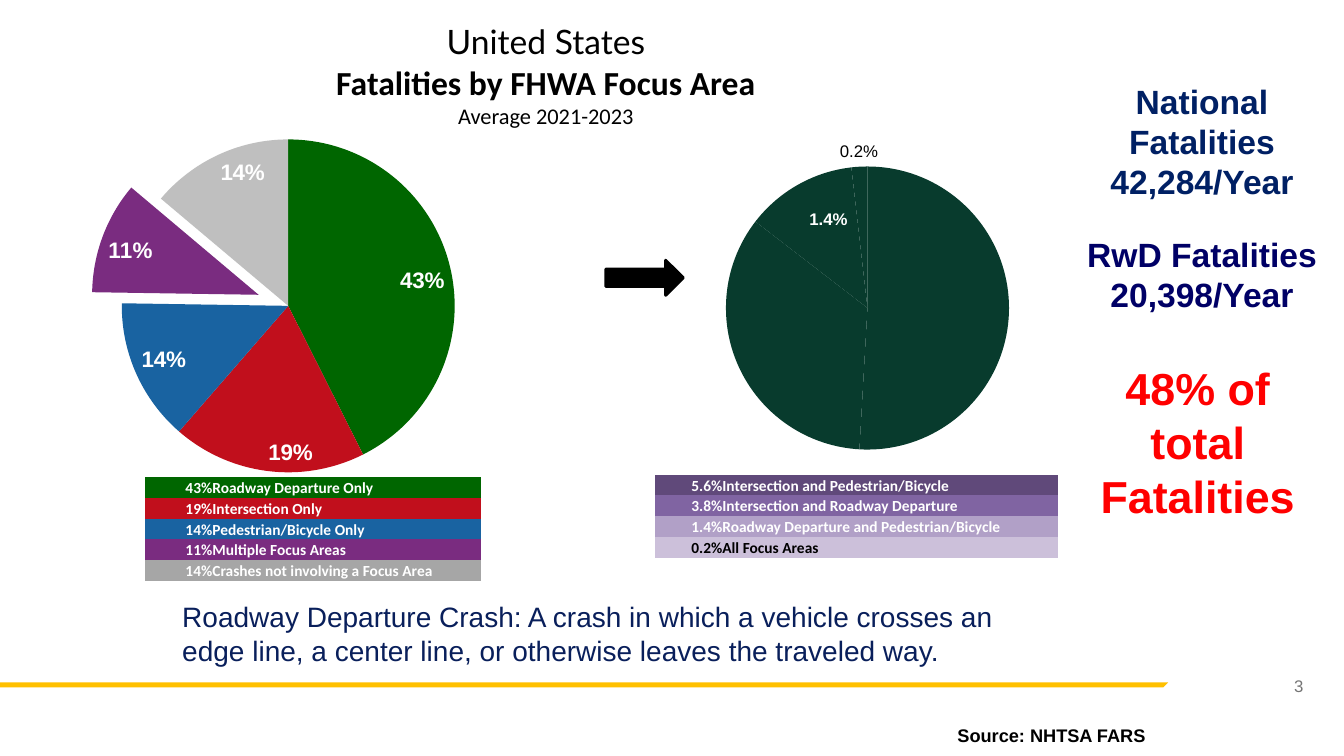
import dataclasses

import lxml.etree
import pptx
import pptx.chart.data
import pptx.dml.color
import pptx.enum.chart
import pptx.enum.shapes
import pptx.enum.text
import pptx.oxml.ns
import pptx.util

Pt = pptx.util.Pt
qn = pptx.oxml.ns.qn
ALIGN = pptx.enum.text.PP_ALIGN
ANCHOR = pptx.enum.text.MSO_ANCHOR
LABEL = pptx.enum.chart.XL_LABEL_POSITION
SHAPE = pptx.enum.shapes.MSO_SHAPE
NO_GRID_STYLE = "{2D5ABB26-0587-4C30-8999-92F81FD0307C}"


@dataclasses.dataclass(frozen=True)
class Theme:
    body: str = "Arial"
    heading: str = "Lato"
    legend: str = "Calibri"
    black: str = "000000"
    white: str = "FFFFFF"
    gold: str = "FFC000"
    gray: str = "757575"
    national: str = "002064"
    departure: str = "000066"
    alert: str = "FF0000"
    definition: str = "091F5B"
    focus_pie: tuple = ("006600", "C10F1C", "1963A1", "7A2C80", "BFBFBF")
    focus_legend: tuple = ("006600", "C10F1C", "1963A1", "7A2C80", "A6A6A6")
    overlap_pie: tuple = ("083B2D",) * 4
    overlap_legend: tuple = ("60497A", "8064A2", "B1A0C7", "CCC0DA")
    alert_size: int = 32
    fact_size: int = 24
    definition_size: int = 20
    period_size: int = 16
    pie_size: int = 16
    source_size: int = 13
    small_size: int = 12
    legend_size: int = 11


THEME = Theme()


def rgb(color):
    return pptx.dml.color.RGBColor.from_string(color)


def points(*lengths):
    return [Pt(length) for length in lengths]


def style(font, face, size, color, bold=False):
    font.name = face
    font.size = Pt(size)
    font.bold = bold
    font.color.rgb = rgb(color)


def add_text(slide, box, text, size, color, bold=False, align=ALIGN.LEFT,
             anchor=ANCHOR.TOP, side=7.2, wrap=True):
    frame = slide.shapes.add_textbox(*points(*box)).text_frame
    frame.word_wrap = wrap
    frame.vertical_anchor = anchor
    frame.margin_left = frame.margin_right = Pt(side)
    paragraph = frame.paragraphs[0]
    paragraph.text = text
    paragraph.alignment = align
    style(paragraph.font, THEME.body, size, color, bold)


def add_heading(slide, box):
    heading = slide.shapes.title
    heading.left, heading.top, heading.width, heading.height = points(*box)
    frame = heading.text_frame
    frame.word_wrap = True
    frame.auto_size = pptx.enum.text.MSO_AUTO_SIZE.NONE
    frame.vertical_anchor = ANCHOR.TOP
    lines = (
        ("United States", THEME.heading, THEME.fact_size, False),
        ("Fatalities by FHWA Focus Area", THEME.legend, THEME.fact_size, True),
        ("Average 2021-2023", THEME.legend, THEME.period_size, False),
    )
    frame.text = "\n".join(line[0] for line in lines)
    for paragraph, (_, face, size, bold) in zip(frame.paragraphs, lines):
        paragraph.alignment = ALIGN.CENTER
        style(paragraph.font, face, size, THEME.black, bold)


def add_layout(parent, index, **settings):
    for old in parent.findall(qn("c:layout")):
        parent.remove(old)
    layout = lxml.etree.Element(qn("c:layout"))
    manual = lxml.etree.SubElement(layout, qn("c:manualLayout"))
    for tag, value in settings.items():
        lxml.etree.SubElement(manual, qn(f"c:{tag}")).set("val", str(value))
    parent.insert(index, layout)


def add_pie(slide, box, name, shares, colors, number_format, label_size, plot):
    data = pptx.chart.data.CategoryChartData(number_format=number_format)
    data.categories = [str(number + 1) for number in range(len(shares))]
    data.add_series(name, shares)
    chart = slide.shapes.add_chart(
        pptx.enum.chart.XL_CHART_TYPE.PIE, *points(*box), data).chart
    chart.has_legend = False
    chart.has_title = False
    style(chart.font, THEME.body, 10, THEME.black)
    pie = chart.plots[0]
    pie.vary_by_categories = True
    pie.has_data_labels = True
    labels = pie.data_labels
    labels.show_value = True
    labels.number_format = number_format
    labels.number_format_is_linked = False
    labels.position = LABEL.INSIDE_END
    style(labels.font, THEME.body, label_size, THEME.white, True)
    for index, color in enumerate(colors):
        fill = pie.series[0].points[index].format.fill
        fill.solid()
        fill.fore_color.rgb = rgb(color)
    left, top, width, height = plot
    plot_area = chart._chartSpace.find(f"{qn('c:chart')}/{qn('c:plotArea')}")
    add_layout(plot_area, 0, layoutTarget="inner", xMode="edge", yMode="edge",
               x=left, y=top, w=width, h=height)
    return pie.series[0]


def add_focus_pie(slide, box):
    series = add_pie(slide, box, "Series 1", (0.43, 0.19, 0.14, 0.11, 0.14),
                     THEME.focus_pie, "0%", THEME.pie_size,
                     (0.22, 0.04, 0.56, 0.92))
    multiple = series._element.findall(qn("c:dPt"))[3]
    explosion = lxml.etree.Element(qn("c:explosion"))
    explosion.set("val", "19")
    multiple.insert(1, explosion)


def add_overlap_pie(slide, box):
    series = add_pie(slide, box, "Multiple Focus Areas",
                     (0.056, 0.038, 0.014, 0.002), THEME.overlap_pie, "0.0%",
                     THEME.small_size, (0.17, 0.11, 0.68, 0.85))
    departure_bicycle = series.points[2].data_label
    style(departure_bicycle.font, THEME.body, THEME.small_size, THEME.white, True)
    departure_bicycle.position = LABEL.CENTER
    all_areas = series.points[3].data_label
    style(all_areas.font, THEME.body, THEME.small_size, THEME.black)
    all_areas.position = LABEL.OUTSIDE_END
    nudged = series._element.find(f"{qn('c:dLbls')}/{qn('c:dLbl')}")
    add_layout(nudged, 1, x=-0.01, y=-0.08)


def add_legend(slide, box, column_count, rows, colors):
    table = slide.shapes.add_table(len(rows), column_count, *points(*box)).table
    table.first_row = table.horz_banding = False
    table._tbl.tblPr.find(qn("a:tableStyleId")).text = NO_GRID_STYLE
    unit = box[2] / (column_count + 1)
    for index, column in enumerate(table.columns):
        column.width = Pt(unit * (2 if index == 1 else 1))
    for index, ((share, area, span), color) in enumerate(zip(rows, colors)):
        table.rows[index].height = Pt(box[3] / len(rows))
        ink = THEME.black if area == "All Focus Areas" else THEME.white
        for column in range(column_count):
            cell = table.cell(index, column)
            cell.fill.solid()
            cell.fill.fore_color.rgb = rgb(color)
            cell.vertical_anchor = ANCHOR.BOTTOM
            cell.margin_left = cell.margin_right = 0
            cell.margin_top = cell.margin_bottom = 0
            paragraph = cell.text_frame.paragraphs[0]
            if column < 2:
                paragraph.text = (share, area)[column]
                paragraph.alignment = (ALIGN.RIGHT, ALIGN.LEFT)[column]
                style(paragraph.font, THEME.legend, THEME.legend_size, ink, True)
            else:
                end = lxml.etree.SubElement(paragraph._p, qn("a:endParaRPr"))
                end.set("sz", str(THEME.legend_size * 100))
        if span > 1:
            table.cell(index, 1).merge(table.cell(index, span))


def add_arrow(slide, box):
    arrow = slide.shapes.add_shape(SHAPE.RIGHT_ARROW, *points(*box))
    arrow.shadow.inherit = False
    arrow.fill.solid()
    arrow.fill.fore_color.rgb = rgb(THEME.black)
    arrow.line.color.rgb = rgb(THEME.black)
    arrow.line.width = Pt(2)


def add_facts(slide, box):
    left, top, width, _ = box
    facts = (
        (3, 0, width - 6, 116.6, "National Fatalities 42,284/Year",
         THEME.fact_size, THEME.national, 0),
        (0, 109.4, width, 65.5, "RwD Fatalities 20,398/Year",
         THEME.fact_size, THEME.departure, 7.2),
        (-3, 200.2, width, 123.8, "48% of total Fatalities",
         THEME.alert_size, THEME.alert, 7.2),
    )
    for x, y, wide, high, text, size, color, side in facts:
        add_text(slide, (left + x, top + y, wide, high), text, size, color,
                 bold=True, align=ALIGN.CENTER, side=side)


def add_footer(slide, box):
    left, top, width, _ = box
    rule_height, slant = 3.6, 3.6
    outline = slide.shapes.build_freeform(*points(left, top + rule_height))
    outline.add_line_segments([
        points(left + 0.7, top), points(left + width, top),
        points(left + width - slant, top + rule_height)], close=True)
    rule = outline.convert_to_shape()
    rule.shadow.inherit = False
    rule.fill.solid()
    rule.fill.fore_color.rgb = rgb(THEME.gold)
    rule.line.fill.background()
    add_text(slide, (left + 878.4, top - 7.2, 60.5, 18.7), "3", THEME.small_size,
             THEME.gray, align=ALIGN.RIGHT, anchor=ANCHOR.MIDDLE)
    add_text(slide, (left + 677.5, top + 26.7, 150.5, 23), "Source: NHTSA FARS",
             THEME.source_size, THEME.black, bold=True, wrap=False)


def main():
    deck = pptx.Presentation()
    deck.slide_width, deck.slide_height = points(960, 540)
    slide = deck.slides.add_slide(deck.slide_layouts[5])
    add_footer(slide, (-0.7, 487.4, 835.2, 52.6))
    add_heading(slide, (149.8, 11.5, 480.2, 106.6))
    add_arrow(slide, (432.7, 185.8, 55.4, 25.2))
    add_facts(slide, (768.2, 54, 180.7, 324))
    add_text(slide, (123.1, 424.8, 609.8, 79.9),
             "Roadway Departure Crash: A crash in which a vehicle crosses an edge "
             "line, a center line, or otherwise leaves the traveled way.",
             THEME.definition_size, THEME.definition)
    add_focus_pie(slide, (-6.5, 89.3, 424.8, 258.5))
    add_legend(slide, (103.7, 340.6, 240, 74.5), 4, (
        ("43%", "Roadway Departure Only", 2),
        ("19%", "Intersection Only", 1),
        ("14%", "Pedestrian/Bicycle Only", 2),
        ("11%", "Multiple Focus Areas", 2),
        ("14%", "Crashes not involving a Focus Area", 3),
    ), THEME.focus_legend)
    add_legend(slide, (468, 339.1, 288, 59.2), 5, (
        ("5.6%", "Intersection and Pedestrian/Bicycle", 3),
        ("3.8%", "Intersection and Roadway Departure", 3),
        ("1.4%", "Roadway Departure and Pedestrian/Bicycle", 4),
        ("0.2%", "All Focus Areas", 1),
    ), THEME.overlap_legend)
    add_overlap_pie(slide, (468, 92.2, 297.4, 239))
    deck.save("out.pptx")


if __name__ == "__main__":
    main()
